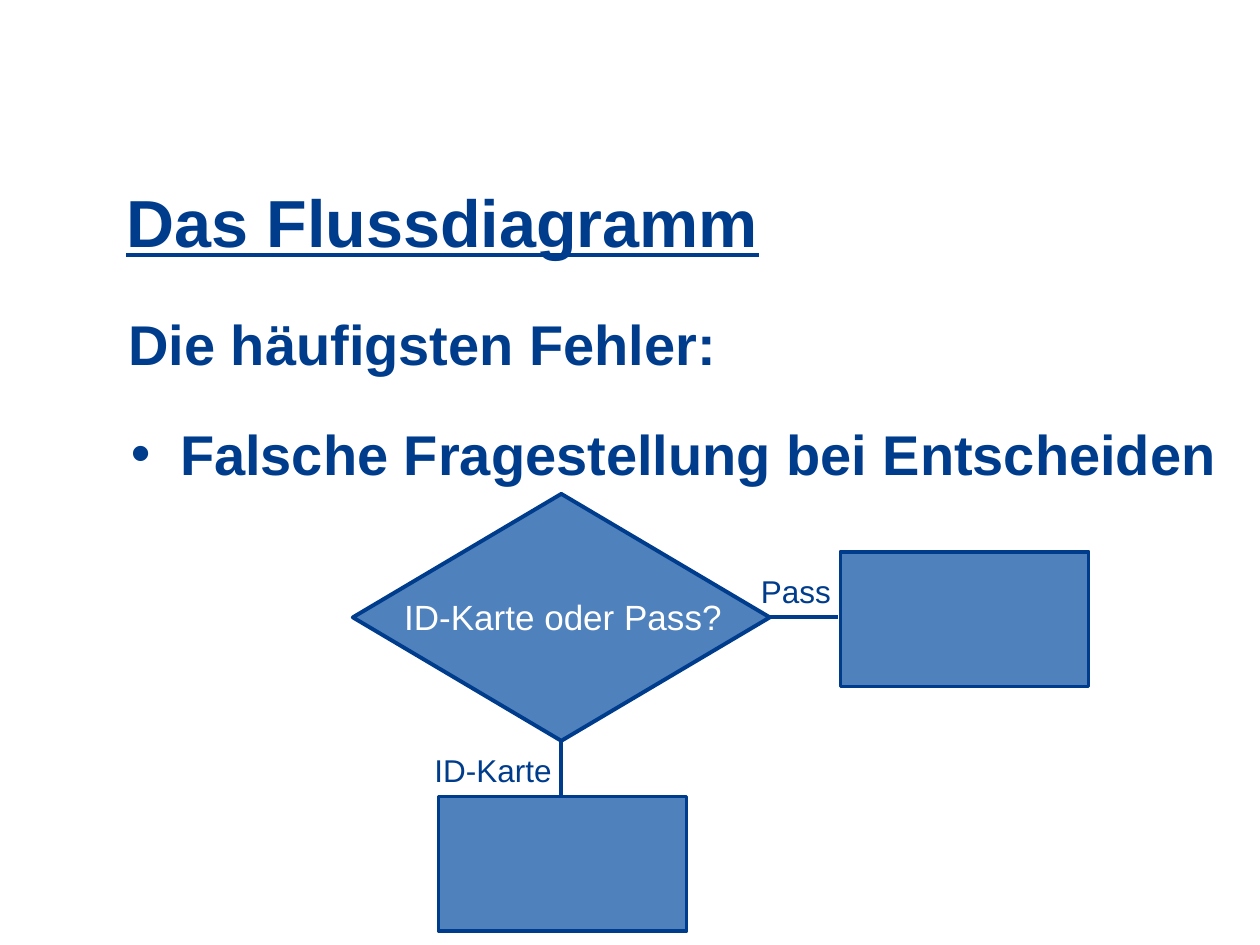
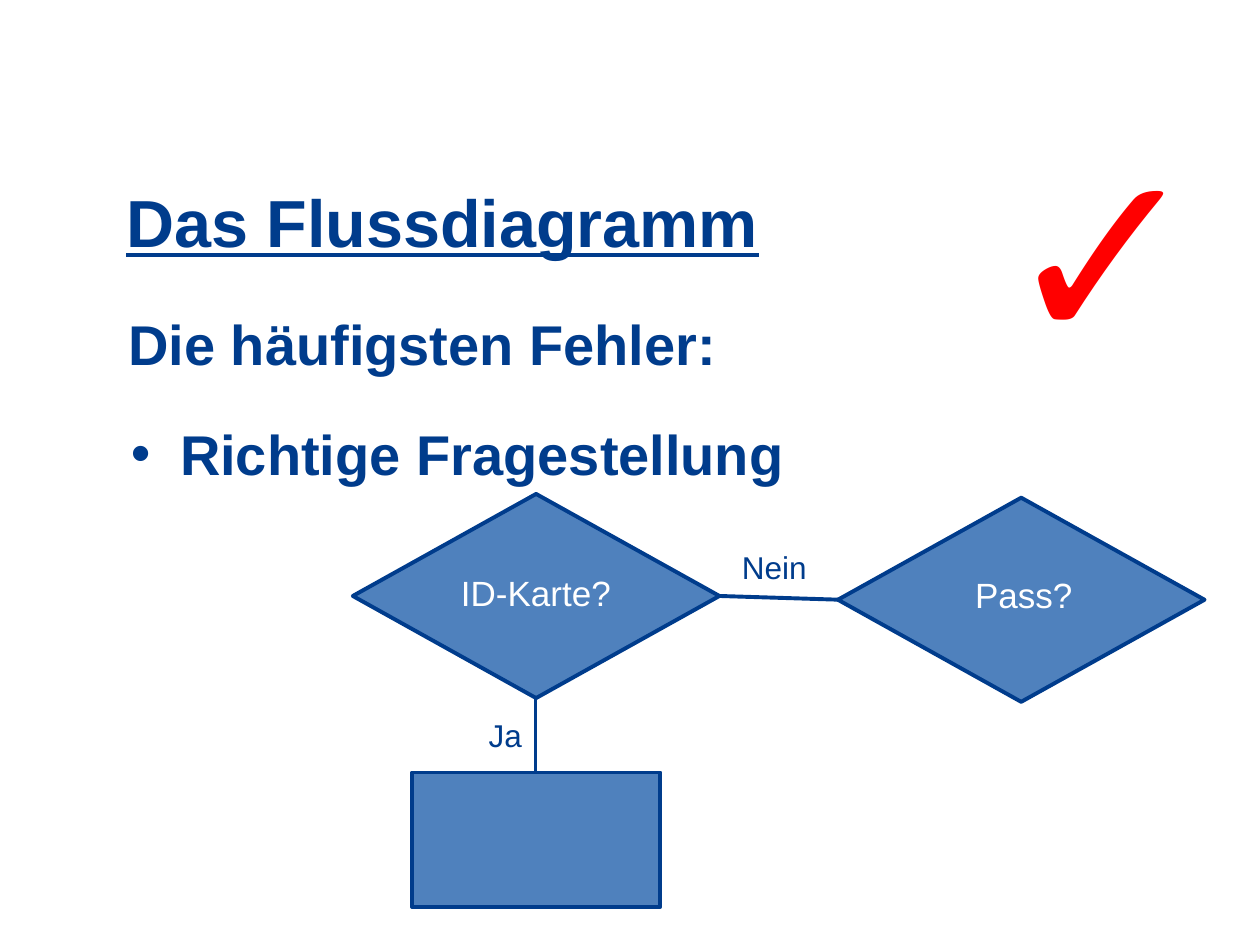
from lxml.etree import SubElement
from pptx import Presentation
from pptx.dml.color import RGBColor
from pptx.enum.shapes import MSO_CONNECTOR, MSO_SHAPE
from pptx.enum.text import MSO_ANCHOR, MSO_AUTO_SIZE, PP_ALIGN
from pptx.oxml.ns import qn
from pptx.util import Inches, Pt

COLORS = {"navy": "003C8C", "blue": "4F81BD", "white": "FFFFFF", "red": "FF0000"}
FONT = "Arial"
BOX = (1.97, 1.07)


def color(name):
    return RGBColor.from_string(COLORS[name])


class Deck:
    def __init__(self):
        self.prs = Presentation()
        self.prs.slide_width, self.prs.slide_height = Inches(10), Inches(7.5)
        self.slide = None

    def start(self, point):
        """Add a slide with the shared heading, subheading and one bullet."""
        self.slide = self.prs.slides.add_slide(self.prs.slide_layouts[5])
        title = self.slide.shapes.title
        title.left, title.top = Inches(0.9), Inches(1.39)
        title.width, title.height = Inches(8.74), Inches(0.74)
        self.letter(title, "Das Flussdiagramm", 38, bold=True, line=True)
        self.bullet(point)
        self.text("Die häufigsten Fehler:", (0.92, 2.41, 4.91, 0.64), 32,
                  bold=True, wrap=False)

    def letter(self, shape, text, size, tint="navy", bold=False, line=False, wrap=True):
        """Put one styled run into the shape."""
        frame = shape.text_frame
        frame.word_wrap = wrap
        frame.auto_size = MSO_AUTO_SIZE.SHAPE_TO_FIT_TEXT
        frame.vertical_anchor = MSO_ANCHOR.TOP
        para = frame.paragraphs[0]
        para.alignment = PP_ALIGN.LEFT
        run = para.add_run()
        run.text = text
        font = run.font
        font.name, font.size = FONT, Pt(size)
        font.bold, font.underline = bold, line
        font.color.rgb = color(tint)

    def text(self, text, area, size, **style):
        box = self.slide.shapes.add_textbox(*map(Inches, area))
        self.letter(box, text, size, **style)
        return box

    def bullet(self, text):
        box = self.text(text, (0.94, 3.28, 8.98, 0.64), 32, bold=True)
        props = box.text_frame.paragraphs[0]._p.get_or_add_pPr()
        props.set("marL", str(Inches(0.39)))
        props.set("indent", str(-Inches(0.39)))
        SubElement(props, qn("a:buFont"), typeface=FONT)
        SubElement(props, qn("a:buChar"), char="•")

    def shape(self, kind, area, weight):
        shape = self.slide.shapes.add_shape(kind, *map(Inches, area))
        shape.shadow.inherit = False
        shape.fill.solid()
        shape.fill.fore_color.rgb = color("blue")
        shape.line.color.rgb = color("navy")
        shape.line.width = Pt(weight)

    def choice(self, area):
        self.shape(MSO_SHAPE.FLOWCHART_DECISION, area, 2.25)

    def step(self, left, top):
        self.shape(MSO_SHAPE.FLOWCHART_PROCESS, (left, top, *BOX), 2)

    def ask(self, text, left, top, width):
        self.text(text, (left, top, width, 0.44), 20, tint="white")

    def label(self, text, left, top, width):
        self.text(text, (left, top, width, 0.4), 18)

    def link(self, *ends):
        line = self.slide.shapes.add_connector(MSO_CONNECTOR.STRAIGHT, *map(Inches, ends))
        line.line.color.rgb = color("navy")
        line.line.width = Pt(2.25)
        SubElement(line._element.spPr, qn("a:effectLst"))


def wrong(deck):
    deck.start("Falsche Fragestellung bei Entscheiden")
    deck.choice((2.8, 3.92, 3.31, 1.96))
    deck.ask("ID-Karte oder Pass?", 3.11, 4.68, 2.83)
    deck.link(6.1, 4.9, 6.65, 4.9)
    deck.link(4.45, 5.88, 4.45, 6.31)
    deck.label("Pass", 5.94, 4.49, 0.79)
    deck.label("ID-Karte", 3.35, 5.91, 1.34)
    deck.step(6.67, 4.38)
    deck.step(3.48, 6.32)


def right(deck):
    deck.start("Richtige Fragestellung")
    for left, top in ((2.8, 3.92), (6.65, 3.95)):
        deck.choice((left, top, 2.91, 1.62))
    deck.ask("ID-Karte?", 3.56, 4.49, 1.57)
    deck.ask("Pass?", 7.64, 4.5, 1.14)
    deck.link(5.71, 4.73, 6.67, 4.76)
    deck.link(4.25, 5.54, 4.25, 6.13)
    deck.label("Nein", 5.79, 4.3, 0.79)
    deck.label("Ja", 3.78, 5.63, 0.67)
    deck.step(3.27, 6.13)
    deck.text("✓", (7.86, 0.76, 1.72, 2.42), 138, tint="red", wrap=False)


def main():
    deck = Deck()
    wrong(deck)
    right(deck)
    deck.prs.save("out.pptx")


if __name__ == "__main__":
    main()
